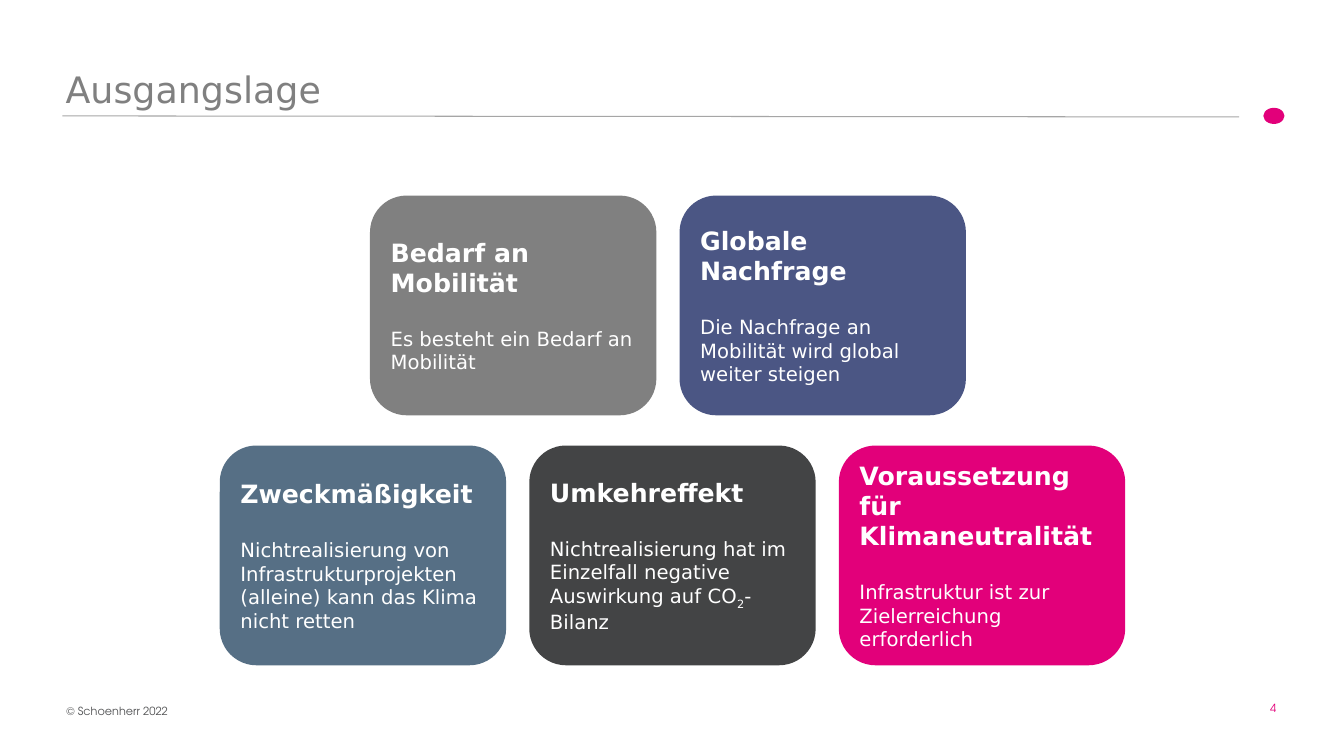
from dataclasses import dataclass

from pptx import Presentation
from pptx.dml.color import RGBColor
from pptx.enum.shapes import MSO_CONNECTOR, MSO_SHAPE
from pptx.enum.text import MSO_ANCHOR, MSO_AUTO_SIZE, PP_ALIGN
from pptx.oxml.ns import qn
from pptx.slide import Slide
from pptx.util import Emu, Pt
from lxml.etree import SubElement

EMU_PER_PX = 9144
MAIN_FONT = "DejaVu Sans"
FOOTER_FONT = "TeX Gyre Adventor"
PINK = "E2007A"
GREY = "808080"
WHITE = "FFFFFF"

CARD_WIDTH, CARD_HEIGHT = 284, 218
CARD_STEP = 307


@dataclass
class Card:
    heading: str
    body: str
    fill: str
    subscript: str = ""
    ending: str = ""


@dataclass
class CardRow:
    left: int
    top: int
    cards: list[Card]


@dataclass
class FooterText:
    text: str
    left: int
    top: int
    width: int
    color: str


CARD_ROWS = [
    CardRow(367, 194, [
        Card("Bedarf an Mobilität", "Es besteht ein Bedarf an Mobilität", GREY),
        Card("Globale Nachfrage",
             "Die Nachfrage an Mobilität wird global weiter steigen", "4B5684"),
    ]),
    CardRow(218, 442, [
        Card("Zweckmäßigkeit",
             "Nichtrealisierung von Infrastrukturprojekten (alleine) "
             "kann das Klima nicht retten", "566F85"),
        Card("Umkehreffekt",
             "Nichtrealisierung hat im Einzelfall negative Auswirkung auf CO",
             "434445", "2", "-Bilanz"),
        Card("Voraussetzung für Klimaneutralität",
             "Infrastruktur ist zur Zielerreichung erforderlich", PINK),
    ]),
]

FOOTER_TEXTS = [
    FooterText("© Schoenherr 2022", 56, 694, 294, "535455"),
    FooterText("4", 1250, 691, 41, PINK),
]


def px(length: int) -> Emu:
    return Emu(length * EMU_PER_PX)


def rgb(color: str) -> RGBColor:
    return RGBColor.from_string(color)


def add_run(paragraph, text: str, size: int, color: str,
            font: str = MAIN_FONT, bold: bool = False):
    run = paragraph.add_run()
    run.text = text
    run.font.size = Pt(size)
    run.font.name = font
    run.font.bold = bold
    run.font.color.rgb = rgb(color)
    return run


def add_filled_shape(slide: Slide, kind: MSO_SHAPE, left: int, top: int,
                     width: int, height: int, fill: str):
    shape = slide.shapes.add_shape(kind, px(left), px(top), px(width), px(height))
    shape.shadow.inherit = False
    shape.fill.solid()
    shape.fill.fore_color.rgb = rgb(fill)
    shape.line.fill.background()
    return shape


def add_title(slide: Slide, text: str) -> None:
    title = slide.shapes.title
    title.left, title.top, title.width, title.height = px(55), px(60), px(1181), px(55)
    frame = title.text_frame
    frame.auto_size = MSO_AUTO_SIZE.NONE
    frame.vertical_anchor = MSO_ANCHOR.BOTTOM
    heading = frame.paragraphs[0]
    heading.alignment = PP_ALIGN.LEFT
    add_run(heading, text, 26, GREY)


def add_title_rule(slide: Slide) -> None:
    rule = slide.shapes.add_connector(
        MSO_CONNECTOR.STRAIGHT, px(62), px(115), px(1229), px(116))
    rule.line.color.rgb = rgb("A6A6A6")
    rule.line.width = Pt(0.75)
    SubElement(rule.element.spPr, qn("a:effectLst"))
    add_filled_shape(slide, MSO_SHAPE.OVAL, 1253, 107, 21, 16, PINK)


def add_card(slide: Slide, card: Card, left: int, top: int) -> None:
    panel = add_filled_shape(slide, MSO_SHAPE.ROUNDED_RECTANGLE, left, top,
                             CARD_WIDTH, CARD_HEIGHT, card.fill)
    frame = panel.text_frame
    frame.word_wrap = True
    frame.vertical_anchor = MSO_ANCHOR.MIDDLE
    heading = frame.paragraphs[0]
    heading.alignment = PP_ALIGN.LEFT
    add_run(heading, card.heading, 18, WHITE, bold=True)
    body = frame.add_paragraph()
    body.alignment = PP_ALIGN.LEFT
    body.space_before = Pt(21)
    add_run(body, card.body, 14, WHITE)
    if card.subscript:
        subscript = add_run(body, card.subscript, 14, WHITE)
        subscript.font._element.set("baseline", "-25000")
        add_run(body, card.ending, 14, WHITE)


def add_footer_text(slide: Slide, footer: FooterText) -> None:
    box = slide.shapes.add_textbox(
        px(footer.left), px(footer.top), px(footer.width), px(24))
    box.text_frame.word_wrap = True
    add_run(box.text_frame.paragraphs[0], footer.text, 8, footer.color, FOOTER_FONT)


def main() -> None:
    presentation = Presentation()
    presentation.slide_width, presentation.slide_height = px(1333), px(750)
    title_only = presentation.slide_layouts[5]
    slide = presentation.slides.add_slide(title_only)
    add_title(slide, "Ausgangslage")
    add_title_rule(slide)
    for row in CARD_ROWS:
        for column, card in enumerate(row.cards):
            add_card(slide, card, row.left + column * CARD_STEP, row.top)
    for footer in FOOTER_TEXTS:
        add_footer_text(slide, footer)
    presentation.save("out.pptx")


if __name__ == "__main__":
    main()
